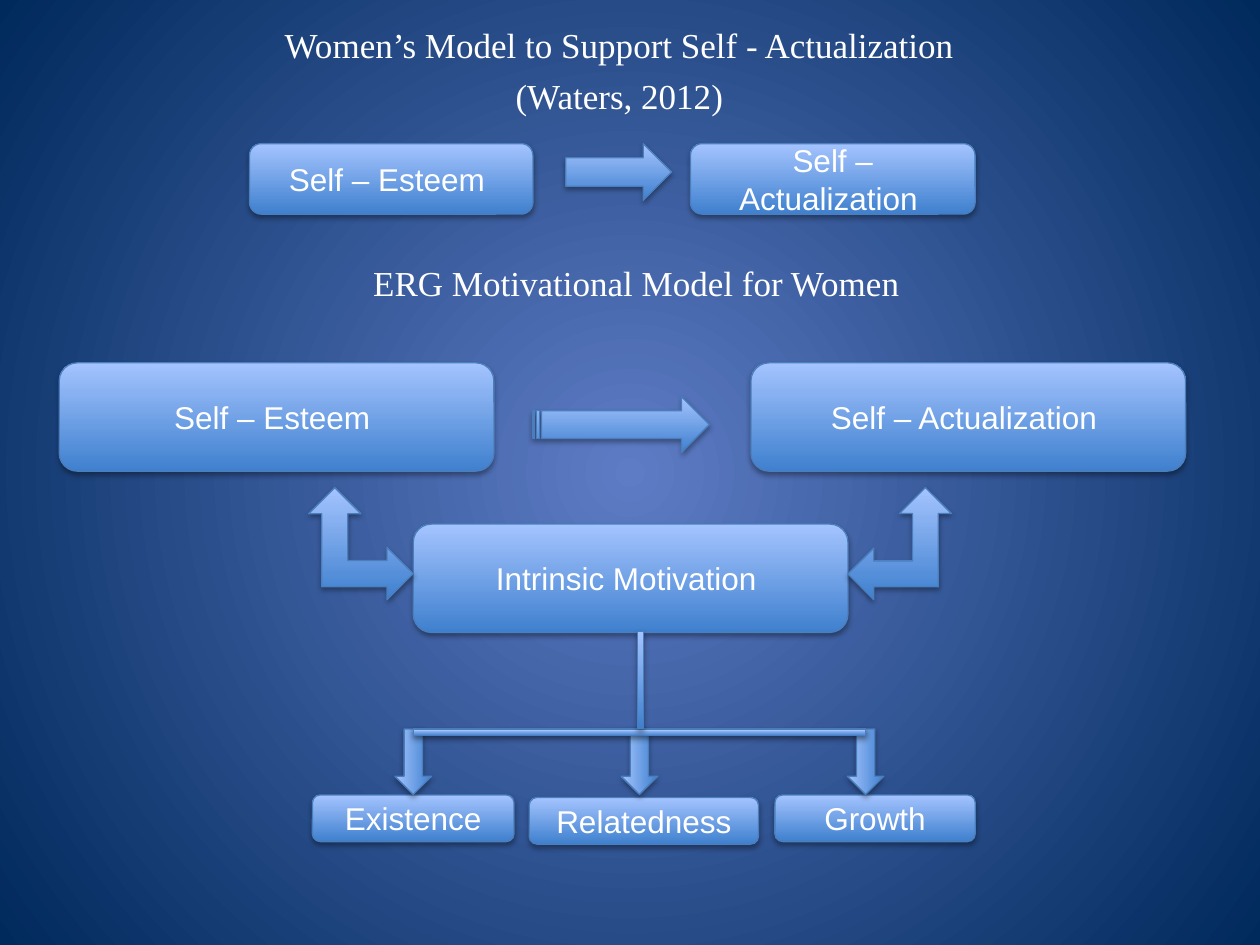
"""Build a slide comparing two models of women's self-actualization."""
from lxml import etree
from pptx import Presentation
from pptx import util as u
from pptx.dml.color import RGBColor
from pptx.enum import shapes, text
from pptx.oxml import parse_xml
from pptx.oxml.ns import nsdecls, qn

KIND = shapes.MSO_SHAPE
LIGHT, DARK, EDGE, WHITE = "A4C4FF", "3F80CE", "4B7EBC", "FFFFFF"
GLOW, NAVY, RULE = "5E7CC5", "00295C", "4F81BD"

HEADINGS = [
    (2.09, 0.14, ["Women’s Model to Support Self - Actualization", "(Waters, 2012)"]),
    (2.26, 2.03, ["ERG Motivational Model for Women "]),
]
BOXES = [
    ("Self – Esteem ", 1.98, 1.14, 2.25, 0.56),
    ("Self – Actualization ", 5.48, 1.14, 2.26, 0.56),
    ("Self – Esteem ", 0.47, 2.88, 3.45, 0.86),
    ("Self – Actualization ", 5.96, 2.88, 3.45, 0.86),
    ("Intrinsic Motivation ", 3.28, 4.16, 3.45, 0.86),
    ("Existence", 2.48, 6.31, 1.6, 0.37),
    ("Relatedness", 4.2, 6.33, 1.82, 0.37),
    ("Growth", 6.15, 6.31, 1.59, 0.37),
]
ARROWS = [
    (KIND.RIGHT_ARROW, 4.49, 1.14, 0.84, 0.45),
    (KIND.STRIPED_RIGHT_ARROW, 4.23, 3.15, 1.4, 0.44),
    (KIND.LEFT_UP_ARROW, 6.73, 3.87, 0.82, 0.89),
]
MIRRORED_ARROW = (KIND.LEFT_UP_ARROW, 2.45, 3.87, 0.83, 0.89)
BRANCH_LEFT, BRANCH_STEP, BRANCH_TOP = 3.02, 1.795, 5.9
BAR_LEFT, BAR_TOP, BAR_WIDTH, BAR_THICKNESS = 3.28, 5.79, 3.59, 0.05
STEM = (KIND.RECTANGLE, 5.06, 5.01, BAR_THICKNESS, 0.77)


def color(value):
    return RGBColor.from_string(value)


def set_gradient(fill, start, end):
    fill.gradient()
    fill.gradient_angle = 90
    for stop, value in zip(fill.gradient_stops, (start, end)):
        stop.color.rgb = color(value)


def add_shadow(item, opacity, distance):
    item._element.spPr.append(parse_xml(
        f'<a:effectLst {nsdecls("a")}><a:outerShdw blurRad="{u.Pt(3.1)}" '
        f'dist="{u.Pt(distance)}" dir="5400000" rotWithShape="0">'
        f'<a:srgbClr val="000000"><a:alpha val="{opacity * 1000}"/></a:srgbClr>'
        '</a:outerShdw></a:effectLst>'))


def add_glossy(page, kind, *bounds):
    shape = page.shapes.add_shape(kind, *map(u.Inches, bounds))
    set_gradient(shape.fill, DARK, LIGHT)
    shape.line.color.rgb = color(EDGE)
    shape.line.width = u.Pt(0.75)
    add_shadow(shape, 35, 1.8)
    return shape


def write(frame, lines, font, size, space=0):
    frame.word_wrap = True
    frame.text = "\n".join(lines)
    for para in frame.paragraphs:
        para.alignment = text.PP_ALIGN.CENTER
        para.space_before = u.Pt(space)
        for span in para.runs:
            span.font.name = font
            span.font.size = u.Pt(size)
            span.font.color.rgb = color(WHITE)


def set_background(page):
    fill = page.background.fill
    set_gradient(fill, GLOW, NAVY)
    linear = next(page.background._cSld.iter(qn("a:lin")))
    radial = etree.Element(qn("a:path"), {"path": "circle"})
    etree.SubElement(radial, qn("a:fillToRect"), dict.fromkeys("ltrb", "50000"))
    linear.getparent().replace(linear, radial)


def main():
    deck = Presentation()
    deck.slide_width, deck.slide_height = u.Inches(10), u.Inches(7.5)
    page = deck.slides.add_slide(deck.slide_layouts[6])
    set_background(page)

    for left, top, lines in HEADINGS:
        box = page.shapes.add_textbox(*map(u.Inches, (left, top, 5.65, 0.85)))
        write(box.text_frame, lines, "Times New Roman", 20, 4.8)

    for label, *bounds in BOXES:
        box = add_glossy(page, KIND.ROUNDED_RECTANGLE, *bounds)
        box.text_frame.vertical_anchor = text.MSO_ANCHOR.MIDDLE
        write(box.text_frame, [label], "Arial", 18)

    for arrow in ARROWS:
        add_glossy(page, *arrow)
    mirrored = add_glossy(page, *MIRRORED_ARROW)
    mirrored._element.spPr.find(qn("a:xfrm")).set("flipH", "1")

    for index in range(3):
        left = BRANCH_LEFT + index * BRANCH_STEP
        add_glossy(page, KIND.LEFT_ARROW, left, BRANCH_TOP, 0.52, 0.29).rotation = 270

    ends = (BAR_LEFT, BAR_TOP, BAR_LEFT + BAR_WIDTH, BAR_TOP)
    rule = page.shapes.add_connector(shapes.MSO_CONNECTOR.STRAIGHT, *map(u.Inches, ends))
    rule.line.color.rgb = color(RULE)
    rule.line.width = u.Pt(2)
    add_shadow(rule, 38, 1.6)
    add_glossy(page, KIND.RECTANGLE, BAR_LEFT, BAR_TOP, BAR_WIDTH, BAR_THICKNESS)
    add_glossy(page, *STEM)

    deck.save("out.pptx")


if __name__ == "__main__":
    main()
